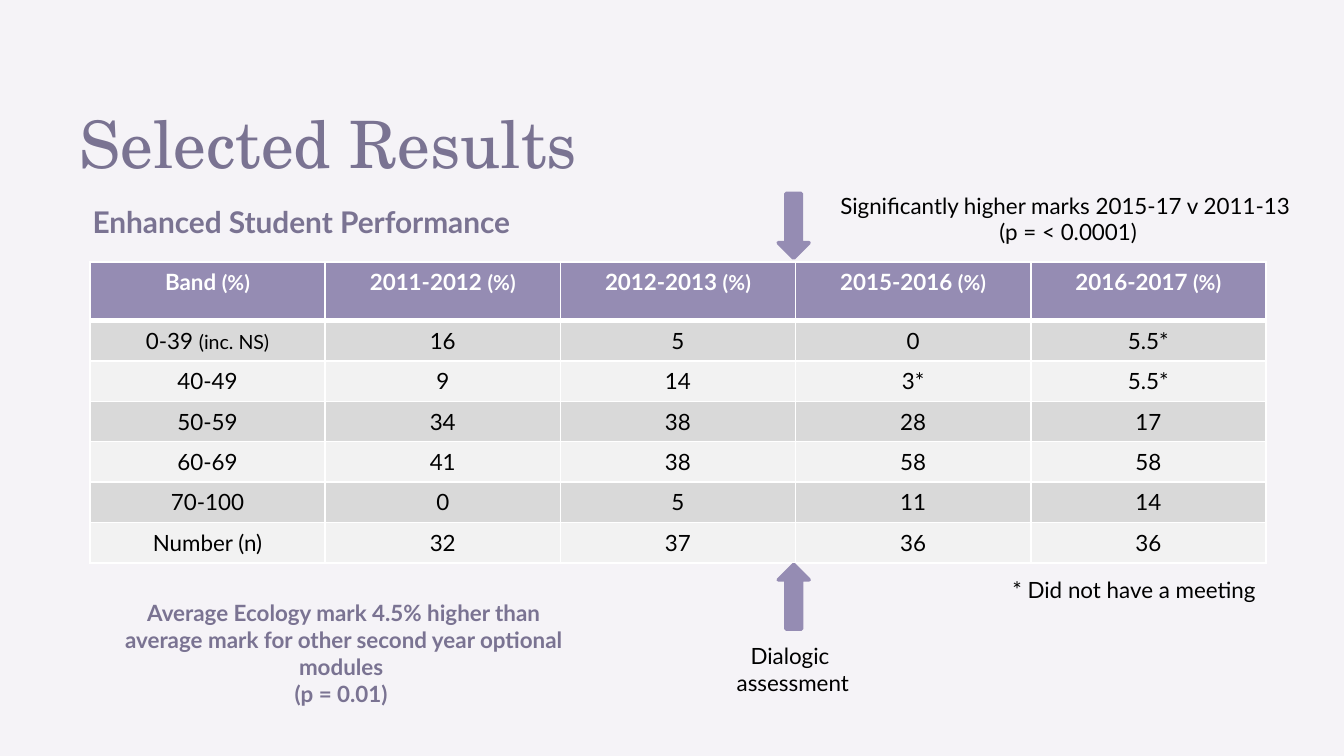
from lxml.etree import SubElement
from pptx import Presentation
from pptx.dml.color import RGBColor
from pptx.enum.shapes import MSO_SHAPE
from pptx.enum.text import PP_ALIGN
from pptx.oxml.ns import qn
from pptx.util import Cm, Pt

PURPLE, DARK, BLACK, WHITE = "958CB3", "7A7392", "000000", "FFFFFF"
BACKGROUND = "F5F3F7"
BANDS = ("D9D9D9", "F2F2F2")
BODY, HEADING = "Lato", "TeX Gyre Schola"

# Each cell is a list of (text, size) runs or a plain string
HEADER = [[(f"{name} ", 12), ("(%)", 11)] for name in
          ("Band", "2011-2012", "2012-2013", "2015-2016", "2016-2017")]
ROWS = [
    [[("0-39 ", 12), ("(inc. NS)", 10.5)], "16", "5", "0", "5.5*"],
    ["40-49", "9", "14", "3*", "5.5*"],
    ["50-59", "34", "38", "28", "17"],
    ["60-69", "41", "38", "58", "58"],
    ["70-100", "0", "5", "11", "14"],
    ["Number (n)", "32", "37", "36", "36"],
]
TABLE_LEFT, TABLE_TOP, COL_WIDTH = 1.7, 4.95, 4.445
HEADER_HEIGHT, ROW_HEIGHT = 1.11, 0.76

# Centred notes: left, top, width, height in cm, colour, bold, paragraphs
NOTES = [
    (12.09, 12.02, 5.79, 1.28, BLACK, False, ["Dialogic ", "assessment"]),
    (15.29, 3.5, 9.8, 1.28, BLACK, False,
     ["Significantly higher marks 2015-17 v 2011-13 ", "(p = < 0.0001)"]),
    (18.49, 10.77, 5.89, 0.77, BLACK, False, ["* Did not have a meeting"]),
    (1.75, 11.2, 9.5, 2.82, DARK, True,
     ["Average Ecology mark 4.5% higher than average mark for other "
      "second year optional modules ", "(p = 0.01) "]),
]
# Top in cm, rotation
ARROWS = [(10.67, 180), (3.66, 0)]


def rgb(value):
    return RGBColor.from_string(value)


def style(r, size, color, bold=False, font=BODY):
    r.font.name, r.font.size, r.font.bold = font, Pt(size), bold
    r.font.color.rgb = rgb(color)


def add_text(slide, box, lines, size, color, bold=False, font=BODY, align=None):
    tf = slide.shapes.add_textbox(*map(Cm, box)).text_frame
    tf.word_wrap = True
    tf.text = "\n".join(lines)
    for p in tf.paragraphs:
        p.alignment = align
        for r in p.runs:
            style(r, size, color, bold, font)
    return tf


def set_borders(cell, bottom):
    """Draw white 1 pt borders with the given bottom width."""
    tcPr = cell._tc.get_or_add_tcPr()
    for side, width in (("L", 1), ("R", 1), ("T", 1), ("B", bottom)):
        ln = SubElement(tcPr, qn(f"a:ln{side}"), w=str(Pt(width)))
        SubElement(SubElement(ln, qn("a:solidFill")), qn("a:srgbClr"), val=WHITE)


def fill_cell(cell, content, fill, color, bold, bottom):
    set_borders(cell, bottom)
    cell.fill.solid()
    cell.fill.fore_color.rgb = rgb(fill)
    p = cell.text_frame.paragraphs[0]
    p.alignment = PP_ALIGN.CENTER
    for text, size in [(content, 12)] if isinstance(content, str) else content:
        r = p.add_run()
        r.text = text
        style(r, size, color, bold)


def add_results(slide):
    rows = [HEADER] + ROWS
    height = HEADER_HEIGHT + ROW_HEIGHT * len(ROWS)
    table = slide.shapes.add_table(
        len(rows), len(HEADER), Cm(TABLE_LEFT), Cm(TABLE_TOP),
        Cm(COL_WIDTH * len(HEADER)), Cm(height)).table
    for col in table.columns:
        col.width = Cm(COL_WIDTH)
    for i, row in enumerate(rows):
        table.rows[i].height = Cm(ROW_HEIGHT if i else HEADER_HEIGHT)
        look = (BANDS[(i - 1) % 2], BLACK, False, 1) if i else (PURPLE, WHITE, True, 3)
        for j, content in enumerate(row):
            fill_cell(table.cell(i, j), content, *look)


def add_arrow(slide, top, rotation):
    sp = slide.shapes.add_shape(MSO_SHAPE.DOWN_ARROW, Cm(14.71), Cm(top),
                                Cm(0.58), Cm(1.22))
    sp.rotation = rotation
    sp.shadow.inherit = False
    sp.fill.solid()
    sp.fill.fore_color.rgb = sp.line.color.rgb = rgb(PURPLE)
    sp.line.width = Pt(2)


def main():
    prs = Presentation()
    prs.slide_width, prs.slide_height = Cm(25.4), Cm(14.29)
    slide = prs.slides.add_slide(prs.slide_layouts[6])
    slide.background.fill.solid()
    slide.background.fill.fore_color.rgb = rgb(BACKGROUND)

    title = add_text(slide, (1.5, 1.96, 19.53, 1.35), ["Selected Results"],
                     35, DARK, font=HEADING)
    title.margin_left = title.margin_right = title.margin_top = title.margin_bottom = 0
    title.paragraphs[0].line_spacing = Pt(42)
    add_text(slide, (1.5, 3.73, 22.53, 9.45), ["Enhanced Student Performance"],
             16, DARK, bold=True)
    add_results(slide)
    for top, rotation in ARROWS:
        add_arrow(slide, top, rotation)
    for *box, color, bold, lines in NOTES:
        add_text(slide, box, lines, 12, color, bold, align=PP_ALIGN.CENTER)
    prs.save("out.pptx")


if __name__ == "__main__":
    main()
